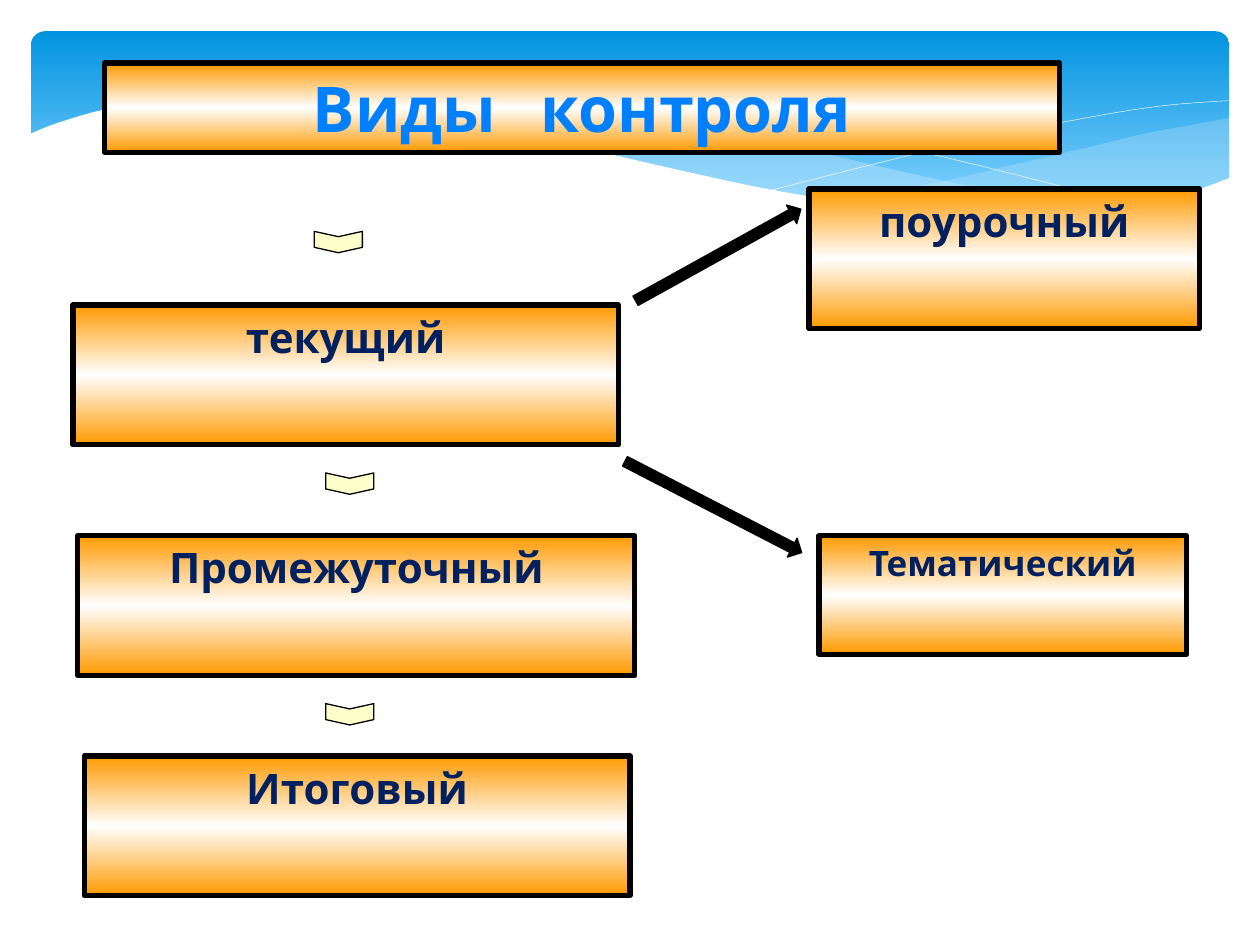
import copy
from dataclasses import dataclass

import lxml.etree
import pptx
import pptx.dml.color
import pptx.enum.shapes
import pptx.enum.text
import pptx.oxml.ns
import pptx.util

Cm, Pt = pptx.util.Cm, pptx.util.Pt
SHAPE = pptx.enum.shapes.MSO_SHAPE
qn = pptx.oxml.ns.qn


@dataclass(frozen=True)
class Theme:
    font: str = "Comic Neue"
    title: str = "0080FF"
    label: str = "002060"
    outline: str = "000000"
    paper: str = "FFFFFF"
    veil: str = "C6E7FC"
    chevron: str = "FFFFCC"
    sky: tuple = ((0, "0293E0"), (0.9, "83D3FE"))
    panel: tuple = ((0, "FF9900"), (0.5, "FFFFFF"), (1, "FF9900"))
    title_size: int = 36
    label_size: int = 24
    small_size: int = 20


THEME = Theme()

# Backdrop edges, in cm from the corner of the banner
HILL = [(-0.05, 2.08), (0.53, 1.85), (1.52, 1.57), (2.72, 1.42), (3.86, 1.35), (5.21, 1.37),
        (6.78, 1.52), (8.64, 1.8), (10.72, 2.26), (12.8, 2.74), (14.68, 3.15), (16.33, 3.43),
        (17.81, 3.61), (19.13, 3.68), (20.27, 3.71), (21.59, 3.61), (22.73, 3.4), (23.5, 3.2),
        (24.18, 2.95)]
HILL_BASE = [(24.18, 5.05), (-0.05, 5.05)]
RIGHT_TOP = [(16.15, 3.43), (17.3, 3.23), (18.49, 3), (19.81, 2.69), (21.23, 2.36),
             (22.38, 2.08), (23.44, 1.88), (24.16, 1.75)]
RIGHT_BASE = [(24.16, 2.95), (23.47, 3.23), (22.76, 3.43), (21.95, 3.58), (21.06, 3.68),
              (20.04, 3.73), (18.9, 3.71), (17.63, 3.61), (16.15, 3.43)]
MIDDLE_TOP = [(6.63, 1.55), (7.7, 1.42), (9.02, 1.4), (10.59, 1.47), (12.12, 1.65),
              (13.82, 1.96), (15.34, 2.31), (17.3, 2.77), (19.05, 3.15), (20.62, 3.4),
              (22.05, 3.61)]
MIDDLE_BASE = [(22.05, 3.61), (21.13, 3.71), (19.86, 3.76), (18.36, 3.68), (16.64, 3.51),
               (14.63, 3.18), (12.83, 2.79), (10.77, 2.31), (9.09, 1.93), (7.57, 1.65),
               (6.63, 1.55)]
FALLING_LINE = [(7.21, 1.65), (8.1, 1.5), (9.93, 1.42), (11.79, 1.5), (13.49, 1.68),
                (15.52, 1.98), (17.83, 2.41), (20.47, 3.05), (22.4, 3.58)]
RISING_LINE = [(14.94, 3.2), (17.02, 2.67), (19.08, 2.18), (21.36, 1.73), (22.83, 1.5),
               (24.13, 1.4)]


def rgb(color):
    return pptx.dml.color.RGBColor.from_string(color)


def fill_solid(sp, color, alpha=None):
    sp.fill.solid()
    sp.fill.fore_color.rgb = rgb(color)
    if alpha is not None:
        clr = sp._element.spPr.find(qn("a:solidFill"))[0]
        lxml.etree.SubElement(clr, qn("a:alpha")).set("val", str(alpha * 1000))


def fill_gradient(sp, stops):
    """Vertical gradient running from top to bottom."""
    sp.fill.gradient()
    sp.fill.gradient_angle = 270
    gs_list = sp._element.spPr.find(".//" + qn("a:gsLst"))
    while len(gs_list) < len(stops):
        gs_list.append(copy.deepcopy(gs_list[0]))
    for stop, (position, color) in zip(sp.fill.gradient_stops, stops):
        stop.position = position
        stop.color.rgb = rgb(color)


def set_line(sp, color, width):
    sp.line.color.rgb = rgb(color)
    sp.line.width = Pt(width)


def add_preset(slide, kind, box):
    sp = slide.shapes.add_shape(kind, *(Cm(v) for v in box))
    sp.shadow.inherit = False
    return sp


def smooth(points, steps=4):
    """Points of a Catmull-Rom curve through the given ones."""
    padded = [points[0], *points, points[-1]]
    curve = []
    for a, b, c, d in zip(padded, padded[1:], padded[2:], padded[3:]):
        for t in (i / steps for i in range(steps)):
            curve.append(tuple(
                q + t * ((r - p) + t * ((2 * p - 5 * q + 4 * r - s)
                                        + t * (3 * q - p - 3 * r + s))) / 2
                for p, q, r, s in zip(a, b, c, d)))
    return curve + [points[-1]]


def add_outline(slide, box, points, closed=True):
    places = [(Cm(box[0] + x), Cm(box[1] + y)) for x, y in points]
    builder = slide.shapes.build_freeform(*places[0])
    builder.add_line_segments(places[1:], close=closed)
    sp = builder.convert_to_shape()
    sp.shadow.inherit = False
    return sp


def add_backdrop(slide, box):
    # Blue banner
    banner = add_preset(slide, SHAPE.ROUNDED_RECTANGLE, box)
    banner.adjustments[0] = 0.07
    fill_gradient(banner, THEME.sky)
    banner.line.fill.background()
    # Veils
    for top, base, alpha in ((RIGHT_TOP, RIGHT_BASE, 29), (MIDDLE_TOP, MIDDLE_BASE, 40)):
        veil = add_outline(slide, box, smooth(top) + smooth(base))
        fill_solid(veil, THEME.veil, alpha)
        veil.line.fill.background()
    # Thin lines
    for points in (FALLING_LINE, RISING_LINE):
        curve = add_outline(slide, box, smooth(points), closed=False)
        curve.fill.background()
        set_line(curve, THEME.paper, 0.25)
    # White hill that cuts the banner off
    hill = add_outline(slide, box, smooth(HILL) + HILL_BASE)
    fill_solid(hill, THEME.paper)
    hill.line.fill.background()


def format_panel(sp, text, size, color):
    fill_gradient(sp, THEME.panel)
    set_line(sp, THEME.outline, 3)
    tf = sp.text_frame
    tf.text = text
    tf.word_wrap = True
    tf.auto_size = pptx.enum.text.MSO_AUTO_SIZE.NONE
    tf.vertical_anchor = pptx.enum.text.MSO_ANCHOR.TOP
    p = tf.paragraphs[0]
    p.alignment = pptx.enum.text.PP_ALIGN.CENTER
    p.font.name, p.font.size, p.font.bold = THEME.font, Pt(size), True
    p.font.color.rgb = rgb(color)


def add_title(slide, box, text):
    title = slide.shapes.title
    title.left, title.top, title.width, title.height = (Cm(v) for v in box)
    format_panel(title, text, THEME.title_size, THEME.title)
    slide.shapes._spTree.append(title._element)  # in front of the backdrop


def add_panel(slide, box, text, size=THEME.label_size):
    format_panel(add_preset(slide, SHAPE.RECTANGLE, box), text, size, THEME.label)


def add_pointer(slide, kind, center, length, angle, color):
    thickness = 0.43
    across, along = (length, thickness) if kind == SHAPE.CHEVRON else (thickness, length)
    x, y = center
    sp = add_preset(slide, kind, (x - along / 2, y - across / 2, along, across))
    sp.rotation = angle
    fill_solid(sp, color)
    set_line(sp, THEME.outline, 0.75)
    return sp


def add_diagram(slide):
    # Stages of control, top to bottom
    add_panel(slide, (1.47, 6.15, 11, 2.82), "текущий")
    add_panel(slide, (1.57, 10.8, 11.23, 2.82), "Промежуточный")
    add_panel(slide, (1.7, 15.24, 11, 2.82), "Итоговый")
    # Kinds of current control
    add_panel(slide, (16.31, 3.81, 7.87, 2.82), "поурочный")
    add_panel(slide, (16.51, 10.8, 7.41, 2.39), "Тематический", THEME.small_size)
    # Chevrons between stages
    for center in ((6.82, 4.88), (7.05, 9.75), (7.05, 14.4)):
        chevron = add_pointer(slide, SHAPE.CHEVRON, center, 0.97, 90, THEME.chevron)
        chevron.adjustments[0] = 0.25
    # Arrows to the kinds
    for center, length, angle in (((14.38, 10.22), 4.01, 27.3), ((14.48, 5.14), 3.81, 331)):
        add_pointer(slide, SHAPE.RIGHT_ARROW, center, length, angle, THEME.outline)


def main():
    prs = pptx.Presentation()
    prs.slide_width, prs.slide_height = Cm(25.4), Cm(19.05)
    slide = prs.slides.add_slide(prs.slide_layouts[5])
    add_backdrop(slide, (0.63, 0.63, 24.15, 3.96))
    add_title(slide, (2.11, 1.27, 19.25, 1.8), "Виды  контроля")
    add_diagram(slide)
    prs.save("out.pptx")


if __name__ == "__main__":
    main()
